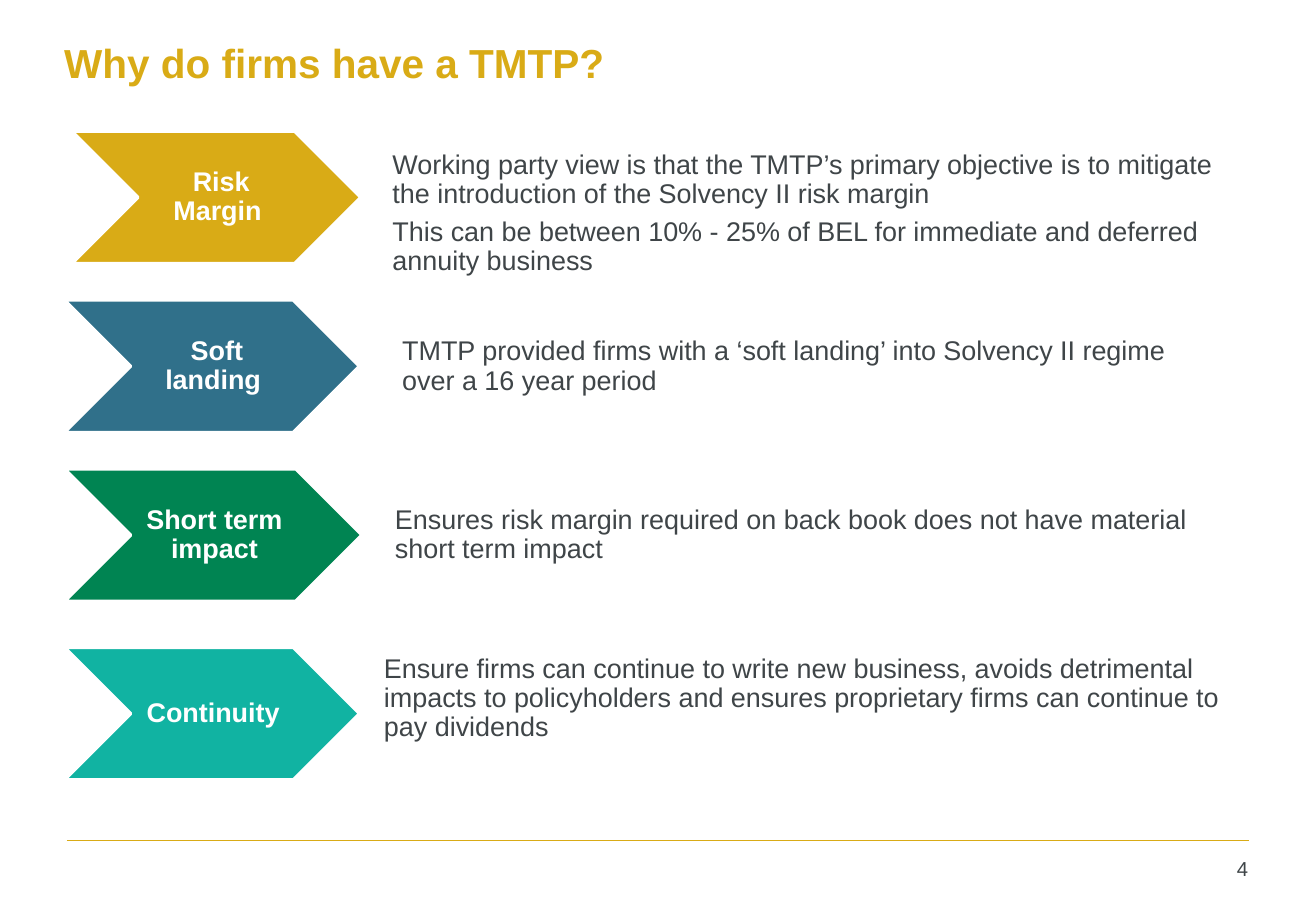
import pptx
import pptx.dml.color
import pptx.enum.shapes
import pptx.enum.text
import pptx.util
from lxml import etree

Inches = pptx.util.Inches
Pt = pptx.util.Pt
RGBColor = pptx.dml.color.RGBColor
ALIGN = pptx.enum.text.PP_ALIGN
ANCHOR = pptx.enum.text.MSO_ANCHOR

GOLD = RGBColor(0xD9, 0xAB, 0x16)
BLUE = RGBColor(0x30, 0x70, 0x8A)
GREEN = RGBColor(0x00, 0x84, 0x52)
TEAL = RGBColor(0x11, 0xB3, 0xA2)
GREY = RGBColor(0x3F, 0x45, 0x48)
WHITE = RGBColor(0xFF, 0xFF, 0xFF)

TITLE = {"size": Pt(24), "bold": True, "color": GOLD}
LABEL = {"size": Pt(16), "bold": True, "color": WHITE}
BODY = {"size": Pt(16), "bold": False, "color": GREY}
NUMBER = {"size": Pt(12), "bold": False, "color": GREY}

TIGHT = {"line_spacing": 0.9, "space_after": Pt(5.6)}
LABEL_PARA = {**TIGHT, "alignment": ALIGN.CENTER}
BODY_PARA = {**TIGHT, "alignment": ALIGN.LEFT}

LABEL_FRAME = {"margin_left": Inches(0.02), "margin_right": 0,
               "margin_top": Inches(0.01), "margin_bottom": Inches(0.01),
               "vertical_anchor": ANCHOR.MIDDLE}
BODY_FRAME = {**LABEL_FRAME, "margin_left": Inches(0.2),
              "margin_right": Inches(0.2)}

# label, colour, chevron (left, top, width), body box, body paragraphs
REASONS = [
    (" Risk Margin", GOLD, (0.59, 1.08, 2.38), (3.03, 1.13, 7.48, 1.26),
     ["Working party view is that the TMTP’s primary objective is to mitigate "
      "the introduction of the Solvency II risk margin",
      "This can be between 10% - 25% of BEL for immediate and deferred "
      "annuity business"]),
    (" Soft landing", BLUE, (0.53, 2.47, 2.43), (3.11, 2.47, 6.88, 1.1),
     ["TMTP provided firms with a ‘soft landing’ into Solvency II regime "
      "over a 16 year period"]),
    ("Short term impact", GREEN, (0.53, 3.86, 2.45), (3.05, 3.78, 6.99, 1.26),
     ["Ensures risk margin required on back book does not have material "
      "short term impact"]),
    ("Continuity", TEAL, (0.53, 5.33, 2.43), (2.96, 5.12, 7.38, 1.26),
     ["Ensure firms can continue to write new business, avoids detrimental "
      "impacts to policyholders and ensures proprietary firms can continue "
      "to pay dividends"]),
]
CHEVRON_HEIGHT = 1.09


def apply(target, values):
    for name, value in values.items():
        setattr(target, name, value)


def write(shape, texts, font, para, frame):
    """Fill a shape with one paragraph per text, all formatted alike."""
    text_frame = shape.text_frame
    text_frame.word_wrap = True
    apply(text_frame, frame)
    for i, text in enumerate(texts):
        item = text_frame.add_paragraph() if i else text_frame.paragraphs[0]
        apply(item, para)
        run = item.add_run()
        run.text = text
        run.font.name = "Arial"
        run.font.size = font["size"]
        run.font.bold = font["bold"]
        run.font.color.rgb = font["color"]


def add_text(slide, box, texts, font, para, frame):
    shape = slide.shapes.add_textbox(*map(Inches, box))
    write(shape, texts, font, para, frame)


def add_chevron(slide, box, color, label):
    kind = pptx.enum.shapes.MSO_SHAPE.CHEVRON
    shape = slide.shapes.add_shape(kind, *map(Inches, box))
    shape.shadow.inherit = False
    shape.fill.solid()
    shape.fill.fore_color.rgb = color
    shape.line.color.rgb = WHITE
    shape.line.width = Pt(2)
    write(shape, [label], LABEL, LABEL_PARA, LABEL_FRAME)


def add_rule(slide, left, right, top):
    kind = pptx.enum.shapes.MSO_CONNECTOR.STRAIGHT
    rule = slide.shapes.add_connector(kind, *map(Inches, (left, top, right, top)))
    rule.line.color.rgb = GOLD
    rule.line.width = Pt(1)
    props = rule.line._get_or_add_ln().getparent()
    etree.SubElement(props, pptx.oxml.ns.qn("a:effectLst"))


def main():
    deck = pptx.Presentation()
    deck.slide_width = Inches(10.83)
    deck.slide_height = Inches(7.5)
    slide = deck.slides.add_slide(deck.slide_layouts[6])

    add_rule(slide, 0.55, 10.28, 6.92)
    add_text(slide, (0.43, -0.11, 9.82, 1.25), ["Why do firms have a TMTP?"],
             TITLE, {}, {"vertical_anchor": ANCHOR.MIDDLE})
    add_text(slide, (9.6, 7, 0.77, 0.37), ["4"],
             NUMBER, {"alignment": ALIGN.RIGHT}, {})
    for label, color, place, box, texts in REASONS:
        add_chevron(slide, (*place, CHEVRON_HEIGHT), color, label)
        add_text(slide, box, texts, BODY, BODY_PARA, BODY_FRAME)

    deck.save("out.pptx")


if __name__ == "__main__":
    main()
